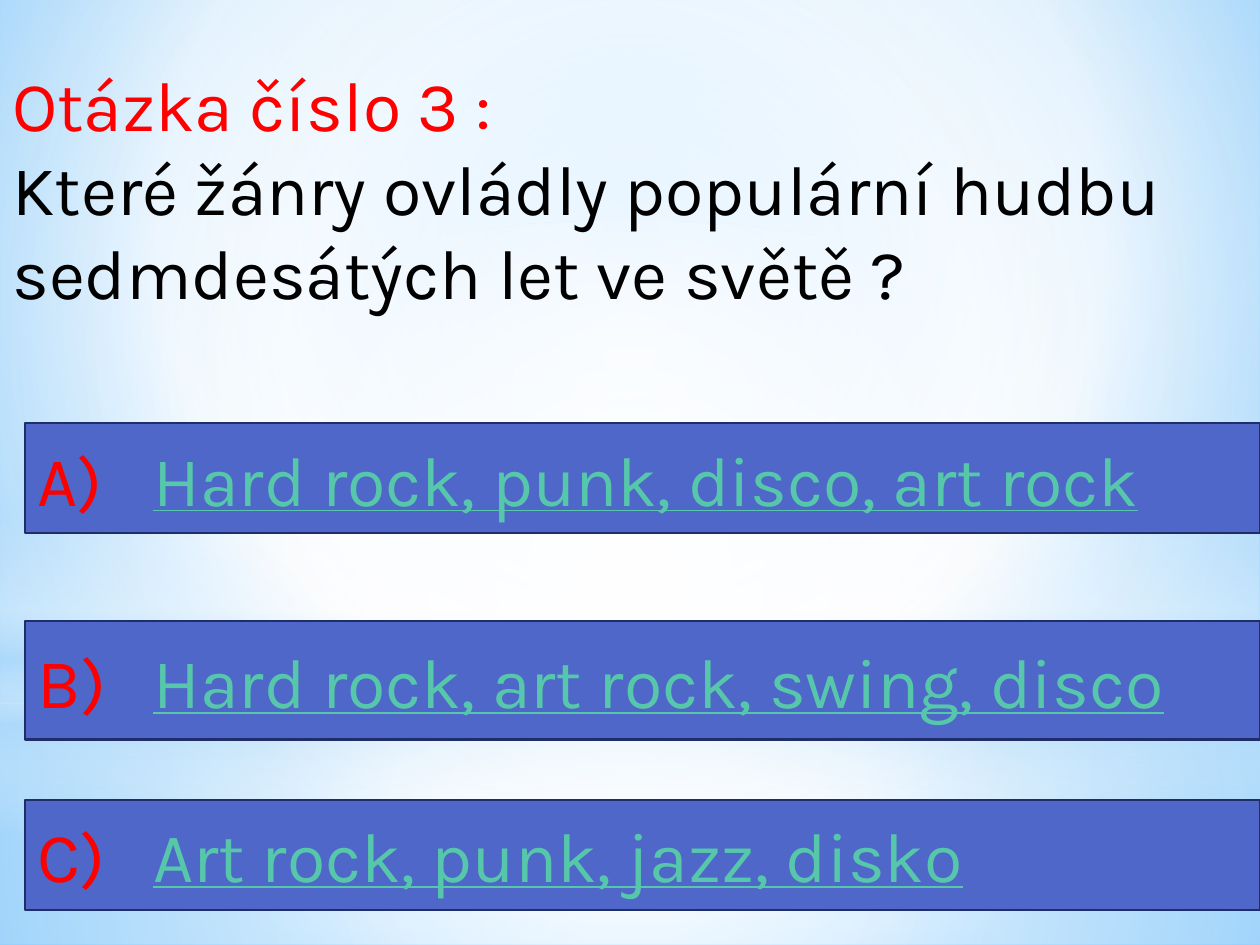
from dataclasses import dataclass

from lxml import etree
from pptx import Presentation
from pptx.dml.color import RGBColor
from pptx.enum.shapes import MSO_SHAPE
from pptx.enum.text import MSO_ANCHOR, MSO_AUTO_SIZE, PP_ALIGN
from pptx.oxml.ns import qn
from pptx.util import Inches, Pt

RECTANGLE, OVAL = MSO_SHAPE.RECTANGLE, MSO_SHAPE.OVAL
MIDDLE, LEFT, GROW = MSO_ANCHOR.MIDDLE, PP_ALIGN.LEFT, MSO_AUTO_SIZE.SHAPE_TO_FIT_TEXT

FONT, FONT_SIZE = "Karla", Pt(40)
LETTER_INDENT = Inches(0.92)
COLORS = {
    "white": "FFFFFF", "haze": "B4DCFA", "sky": "9ED5FF", "deep_sky": "5BB9FF",
    "red": "FF0000", "black": "000000",
    "bar": "4E67C8", "bar_line": "1F2E69", "answer": "56C7AA",
}


@dataclass
class Stop:
    position: int
    color: str
    opacity: int = 100


@dataclass
class Gradient:
    stops: list[Stop]
    focus: tuple[int, int, int, int] = (50, 50, 50, 50)
    angle: int | None = None  # None means a circular gradient


@dataclass
class Glow:
    top: float
    height: float
    gradient: Gradient
    shape_type: MSO_SHAPE = RECTANGLE


@dataclass
class Answer:
    letter: str
    text: str
    top: float
    height: float


BACKGROUND = Gradient(
    [Stop(0, "sky"), Stop(60, "white"), Stop(100, "deep_sky")], (20, 10, 20, 60))
GLOWS = [
    Glow(5.58, 1.92, Gradient(
        [Stop(0, "white", 91), Stop(37, "white", 76), Stop(100, "haze", 79)])),
    Glow(0, 5.58, Gradient(
        [Stop(0, "white", 89), Stop(48, "white", 62), Stop(100, "haze", 79)])),
    Glow(4.12, 2.5, Gradient(
        [Stop(0, "white", 0), Stop(29, "white", 30), Stop(45, "haze", 40),
         Stop(55, "white", 26), Stop(65, "haze", 60), Stop(100, "white", 0)], angle=90)),
    Glow(1.75, 5.58, Gradient([Stop(0, "white"), Stop(56, "white", 0)]), OVAL),
]
ANSWERS = [
    Answer("A)", "Hard rock, punk, disco, art rock", 3.36, 0.87),
    Answer("B)", "Hard rock, art rock, swing, disco", 4.93, 0.94),
    Answer("C)", "Art rock, punk, jazz, disko", 6.35, 0.87),
]


def rgb(name: str) -> RGBColor:
    return RGBColor.from_string(COLORS[name])


def set_gradient(fill, properties, gradient: Gradient) -> None:
    """Swap a solid fill for a gradient with opacity per stop."""
    fill.solid()
    grad = etree.Element(qn("a:gradFill"), rotWithShape="1")
    stop_list = etree.SubElement(grad, qn("a:gsLst"))
    for stop in gradient.stops:
        node = etree.SubElement(stop_list, qn("a:gs"), pos=str(stop.position * 1000))
        color = etree.SubElement(node, qn("a:srgbClr"), val=COLORS[stop.color])
        if stop.opacity < 100:
            etree.SubElement(color, qn("a:alpha"), val=str(stop.opacity * 1000))
    if gradient.angle is None:
        circle = etree.SubElement(grad, qn("a:path"), path="circle")
        edges = {side: str(value * 1000) for side, value in zip("ltrb", gradient.focus)}
        etree.SubElement(circle, qn("a:fillToRect"), edges)
    else:
        etree.SubElement(grad, qn("a:lin"), ang=str(gradient.angle * 60000), scaled="0")
    properties.replace(properties.find(qn("a:solidFill")), grad)


def add_run(paragraph, text: str, color: str, underline: bool = False) -> None:
    run = paragraph.add_run()
    run.text = text
    run.font.name, run.font.size = FONT, FONT_SIZE
    run.font.color.rgb = rgb(color)
    if underline:
        run.font.underline = True


def add_glow(slide, glow: Glow) -> None:
    shape = slide.shapes.add_shape(
        glow.shape_type, 0, Inches(glow.top), Inches(10), Inches(glow.height))
    shape.shadow.inherit = False
    shape.line.fill.background()
    set_gradient(shape.fill, shape.element.spPr, glow.gradient)


def add_question(slide) -> None:
    box = slide.shapes.add_textbox(0, Inches(0.44), Inches(9.57), Inches(2.12))
    box.text_frame.word_wrap = True
    box.text_frame.auto_size = GROW
    paragraph = box.text_frame.paragraphs[0]
    add_run(paragraph, "Otázka číslo 3 :", "red")
    paragraph.add_line_break()
    add_run(paragraph, "Které žánry ovládly populární hudbu sedmdesátých let ve světě ?",
            "black")


def add_answer(slide, answer: Answer) -> None:
    bar = slide.shapes.add_shape(
        RECTANGLE, Inches(0.2), Inches(answer.top), Inches(9.8), Inches(answer.height))
    bar.shadow.inherit = False
    bar.fill.solid()
    bar.fill.fore_color.rgb = rgb("bar")
    bar.line.color.rgb = rgb("bar_line")
    bar.line.width = Pt(1.25)
    bar.text_frame.word_wrap = True
    bar.text_frame.vertical_anchor = MIDDLE
    paragraph = bar.text_frame.paragraphs[0]
    paragraph.alignment = LEFT
    # Hanging indent: the tab after the letter lands on the answer
    indent = paragraph._p.get_or_add_pPr()
    indent.set("marL", str(LETTER_INDENT))
    indent.set("indent", str(-LETTER_INDENT))
    add_run(paragraph, answer.letter + "\t", "red")
    add_run(paragraph, answer.text, "answer", underline=True)


def main() -> None:
    presentation = Presentation()
    presentation.slide_width, presentation.slide_height = Inches(10), Inches(7.5)
    slide = presentation.slides.add_slide(presentation.slide_layouts[6])

    # Sky backdrop
    background_fill = slide.background.fill
    background_fill.solid()
    set_gradient(background_fill, slide.element.find(".//" + qn("p:bgPr")), BACKGROUND)
    for glow in GLOWS:
        add_glow(slide, glow)

    # Question and its answers
    add_question(slide)
    for answer in ANSWERS:
        add_answer(slide, answer)

    presentation.save("out.pptx")


if __name__ == "__main__":
    main()
